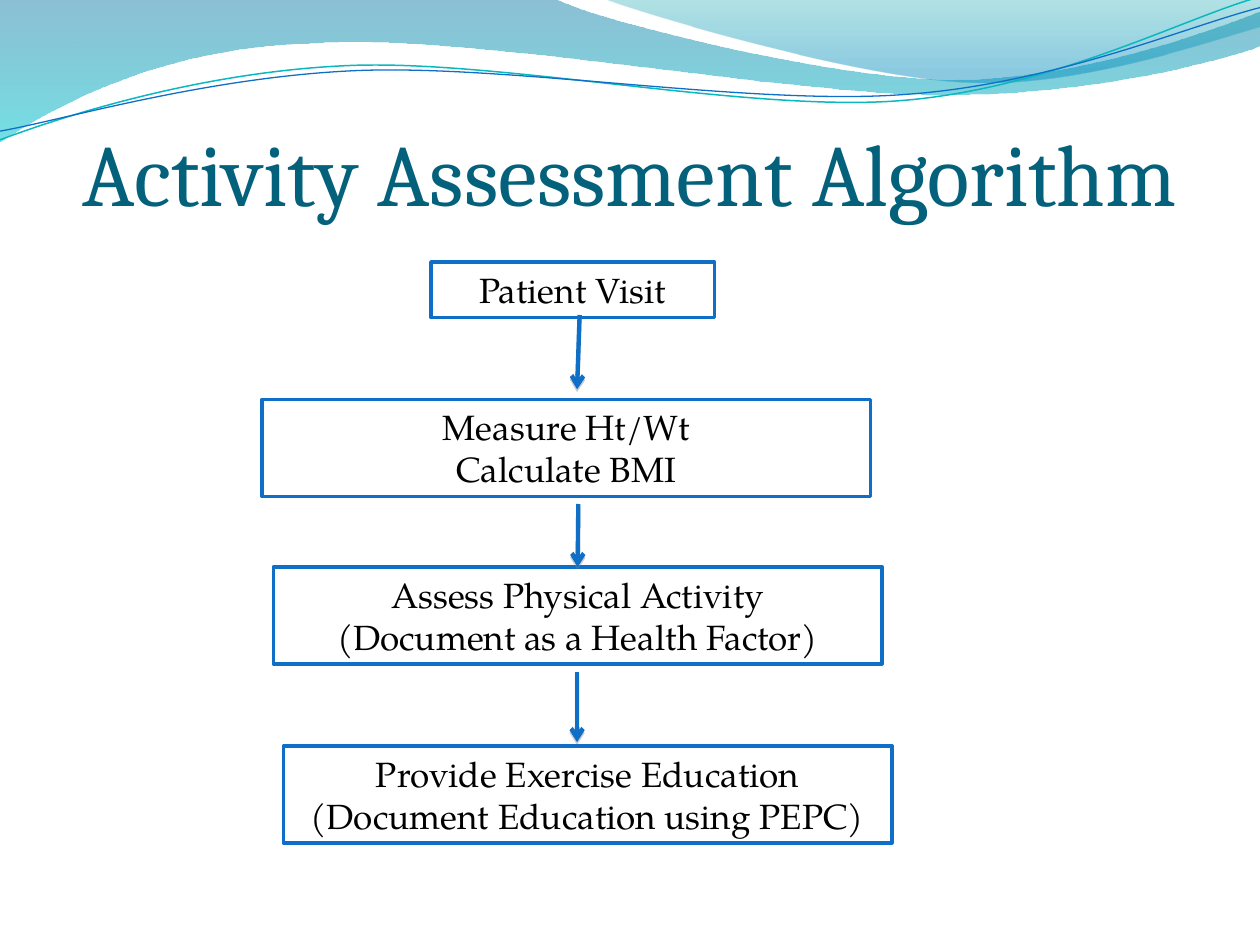
from dataclasses import dataclass
from math import cos, radians, sin

from lxml.etree import SubElement
from pptx import Presentation
from pptx.dml.color import RGBColor as Rgb
from pptx.enum.shapes import MSO_CONNECTOR as Link, MSO_SHAPE as Shape
from pptx.enum.text import MSO_ANCHOR as Anchor, MSO_AUTO_SIZE as Fit, PP_ALIGN as Align
from pptx.oxml.ns import qn
from pptx.util import Pt

PX = 9144
TILT = 2.7


@dataclass(frozen=True)
class Theme:
    """Hold the colours, fonts and sizes of the slide."""
    blue: str = "0F6FC6"
    teal: str = "0AB8BF"
    title: str = "04617B"
    text: str = "000000"
    paper: str = "FFFFFF"
    shade: str = "808080"
    head: str = "Cambria"
    body: str = "TeX Gyre Pagella"
    big: int = 50
    small: int = 20
    edge: float = 2
    arrow: float = 2.5
    deep: tuple = ((0, "0074A1", 45), (1, "00C6CF", 55))
    light: tuple = ((0, "00A1A9", 30), (0.8, "008BBF", 45))


THEME = Theme()

BANDS = [
    (THEME.deep, (0, 0), [
        (440, -1), (476, 17, 664, 63, 758, 63), (853, 63, 958, 26, 1000, 9),
        (1001, 36), (983, 44, 870, 76, 746, 75), (622, 75, 382, 28, 257, 34),
        (129, 36, 46, 83, -1, 113), (0, 0)]),
    (THEME.light, (479, -1), [
        (509, 11, 682, 62, 769, 65), (856, 69, 961, 32, 1000, 21),
        (1000, 0), (479, -1)]),
]
WAVES = [
    (THEME.teal, 0.85, (499, 57), (0, 111), [
        (48, 93, 158, 57, 277, 52), (395, 47, 593, 89, 713, 80),
        (833, 71, 938, 15, 998, -2)]),
    (THEME.blue, 0.75, (499, 59), (0, 104), [
        (47, 96, 164, 61, 283, 56), (403, 51, 597, 84, 717, 75),
        (836, 67, 941, 21, 1000, 6)]),
]
STEPS = [
    ("Patient Visit", 134, 0, 225, 44),
    ("Measure Ht/Wt\nCalculate BMI", 0, 109, 483, 77),
    ("Assess Physical Activity\n(Document as a Health Factor)", 9, 242, 483, 77),
    ("Provide Exercise Education\n(Document Education using PEPC)", 17, 384, 483, 77),
]
ARROWS = [(252, 42, 250, 101), (251, 192, 250, 242), (250, 325, 250, 381)]


def emu(*vals):
    """Turn px lengths into EMU."""
    return [round(v * PX) for v in vals]


def turn(point, hub, angle):
    """Turn a point clockwise about the hub."""
    x, y = point[0] - hub[0], point[1] - hub[1]
    c, s = cos(radians(angle)), sin(radians(angle))
    return hub[0] + x * c - y * s, hub[1] + x * s + y * c


def bend(shape, parts):
    """Join each three lines of a cubic part into one curve."""
    track = next(shape.element.iter(qn("a:path")))
    lines = iter(track.findall(qn("a:lnTo")))
    for part in parts:
        group = [next(lines) for _ in range(len(part) // 2)]
        if len(group) == 3:
            curve = SubElement(track, qn("a:cubicBezTo"))
            group[0].addprevious(curve)
            for line in group:
                curve.append(line[0])
                track.remove(line)


def draw(slide, box, start, parts, close, hub=(0, 0), tilt=0):
    """Build one outline inside the box and hand it to the layout."""
    flat = [start] + [part[i:i + 2] for part in parts for i in range(0, len(part), 2)]
    pts = [emu(box[0] + x, box[1] + y)
           for x, y in (turn(point, hub, tilt) for point in flat)]
    pen = slide.shapes.build_freeform(*pts[0], scale=1.0)
    pen.add_line_segments(pts[1:], close=close)
    shape = pen.convert_to_shape()
    bend(shape, parts)
    shape.rotation = -tilt
    shape.shadow.inherit = False
    first = slide.slide_layout.placeholders[0].element
    shape.element.nvSpPr.cNvPr.set("id", str(20 + len(slide.slide_layout.shapes)))
    first.addprevious(shape.element)
    return shape


def add_waves(slide, box):
    """Place the tinted bands and thin waves of the banner."""
    for stops, start, parts in BANDS:
        band = draw(slide, box, start, parts, True)
        band.line.fill.background()
        band.fill.gradient()
        band.fill.gradient_angle = 270
        for stop, (pos, tone, _) in zip(band.fill.gradient_stops, stops):
            stop.position = pos
            stop.color.rgb = Rgb.from_string(tone)
        for tint, (_, _, alpha) in zip(band.element.iter(qn("a:srgbClr")), stops):
            SubElement(tint, qn("a:alpha"), val=str(alpha * 1000))
    for tone, width, hub, start, parts in WAVES:
        wave = draw(slide, box, start, parts, False, hub, TILT)
        wave.fill.background()
        wave.line.color.rgb = Rgb.from_string(tone)
        wave.line.width = Pt(width)


def style(frame, font, size, tone):
    """Centre the text and set its font."""
    for para in frame.paragraphs:
        para.alignment = Align.CENTER
        for run in para.runs:
            run.font.name = font
            run.font.size = Pt(size)
            run.font.color.rgb = Rgb.from_string(tone)


def add_title(slide, box, text):
    """Fill and place the title placeholder."""
    title = slide.shapes.title
    title.left, title.top, title.width, title.height = emu(*box)
    frame = title.text_frame
    frame.text = text
    frame.vertical_anchor = Anchor.BOTTOM
    frame.auto_size = Fit.NONE
    frame.margin_left = frame.margin_right = frame.margin_bottom = 0
    frame.margin_top = 5 * PX
    style(frame, THEME.head, THEME.big, THEME.title)


def add_step(slide, box, text):
    """Place one framed step."""
    step = slide.shapes.add_shape(Shape.RECTANGLE, *emu(*box))
    step.shadow.inherit = False
    step.fill.solid()
    step.fill.fore_color.rgb = Rgb.from_string(THEME.paper)
    step.line.color.rgb = Rgb.from_string(THEME.blue)
    step.line.width = Pt(THEME.edge)
    frame = step.text_frame
    frame.text = text
    frame.word_wrap = True
    frame.vertical_anchor = Anchor.TOP
    frame.auto_size = Fit.SHAPE_TO_FIT_TEXT
    style(frame, THEME.body, THEME.small, THEME.text)
    return step


def add_arrow(slide, ends):
    """Place one arrow with a soft shadow."""
    arrow = slide.shapes.add_connector(Link.STRAIGHT, *emu(*ends))
    arrow.line.color.rgb = Rgb.from_string(THEME.blue)
    arrow.line.width = Pt(THEME.arrow)
    props = arrow.element.spPr
    SubElement(props.find(qn("a:ln")), qn("a:tailEnd"), type="arrow")
    glow = SubElement(SubElement(props, qn("a:effectLst")), qn("a:outerShdw"),
                      blurRad="0", dist=str(Pt(1.6)), dir="5400000", rotWithShape="0")
    tint = SubElement(glow, qn("a:srgbClr"), val=THEME.shade)
    SubElement(tint, qn("a:alpha"), val="38000")
    return arrow


def add_flow(slide, box):
    """Place the steps and the arrows between them."""
    left, top = box[:2]
    steps = [add_step(slide, (left + x, top + y, w, h), text)
             for text, x, y, w, h in STEPS]
    arrows = [add_arrow(slide, (left + a, top + b, left + c, top + d))
              for a, b, c, d in ARROWS]
    arrows[1].end_connect(steps[2], 0)


def main():
    """Build the slide and save it."""
    deck = Presentation()
    deck.slide_width, deck.slide_height = emu(1000, 750)
    slide = deck.slides.add_slide(deck.slide_layouts[5])
    add_waves(slide, (0, 0, 1000, 114))
    add_title(slide, (50, 75, 900, 103), "Activity Assessment Algorithm")
    add_flow(slide, (208, 208, 500, 461))
    deck.save("out.pptx")


if __name__ == "__main__":
    main()
